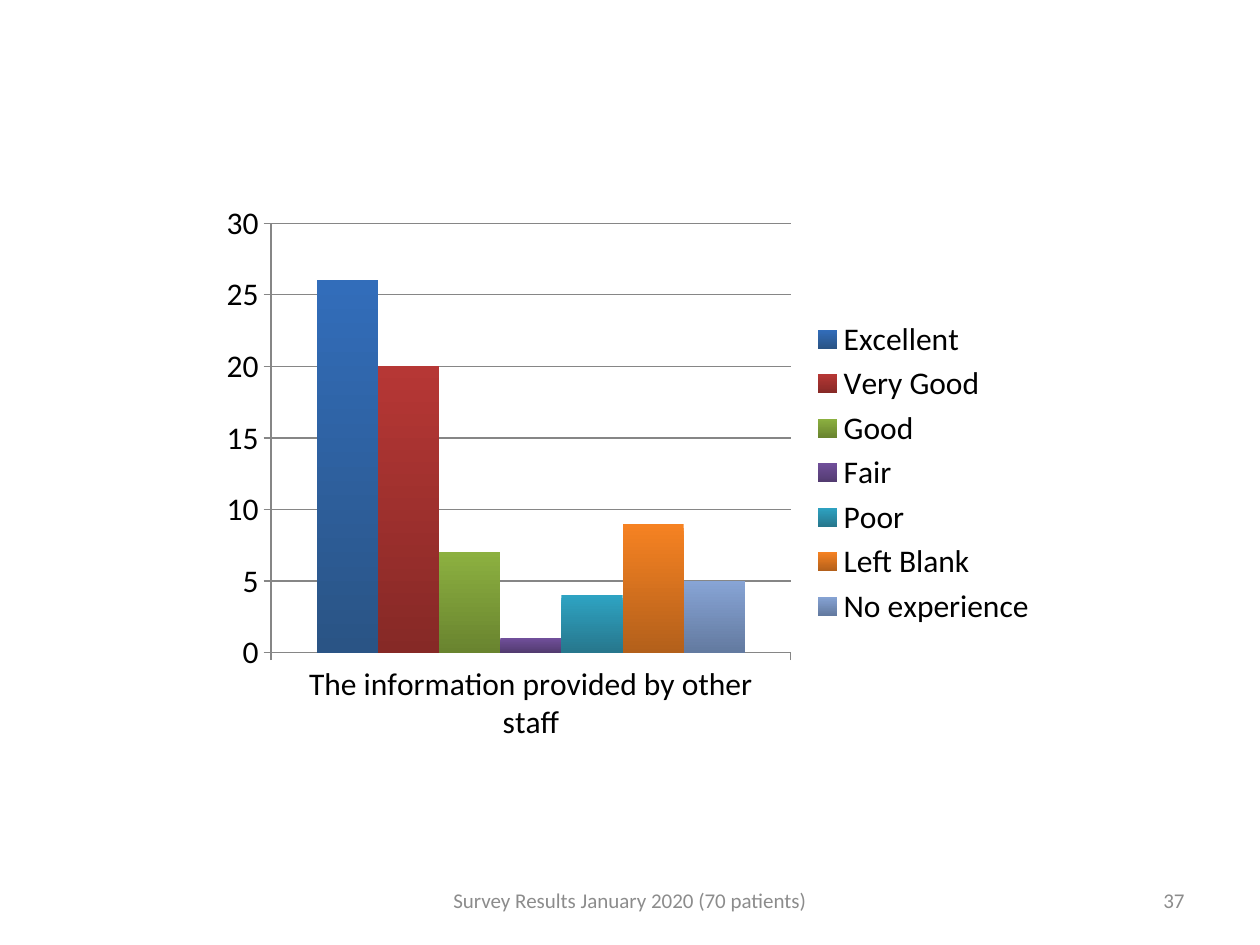
from pptx import Presentation
from pptx import util as u
from pptx.chart.data import CategoryChartData
from pptx.dml.color import RGBColor
from pptx.enum import chart as charts, text

COLORS = {"text": "000000", "footer": "8C8C8C", "axis": "868686"}

# Rating: (patients, gradient top, gradient bottom)
RATINGS = {
    "Excellent": (26, "326DBA", "2A5485"),
    "Very Good": (20, "B63735", "862926"),
    "Good": (7, "8CB040", "69842F"),
    "Fair": (1, "704F9A", "523B70"),
    "Poor": (4, "2EA3C2", "27778D"),
    "Left Blank": (9, "F68222", "B3601B"),
    "No experience": (5, "87A4D5", "637AA0"),
}


class SlideBuilder:
    font_name = "Calibri"

    def __init__(self, slide):
        self.slide = slide

    def style_font(self, font, size, color):
        font.name = self.font_name
        font.size = u.Pt(size)
        font.color.rgb = RGBColor.from_string(COLORS[color])

    def add_footer(self, words, left, width, alignment):
        box = self.slide.shapes.add_textbox(
            u.Cm(left), u.Cm(17.65), u.Cm(width), u.Cm(1.01))
        frame = box.text_frame
        frame.word_wrap = True
        frame.vertical_anchor = text.MSO_ANCHOR.MIDDLE
        frame.text = words
        paragraph = frame.paragraphs[0]
        paragraph.alignment = alignment
        self.style_font(paragraph.runs[0].font, 12, "footer")

    def style_line(self, line):
        line.color.rgb = RGBColor.from_string(COLORS["axis"])
        line.width = u.Pt(0.75)

    def style_axis(self, axis):
        axis.major_tick_mark = charts.XL_TICK_MARK.OUTSIDE
        axis.minor_tick_mark = charts.XL_TICK_MARK.NONE
        self.style_line(axis.format.line)

    def add_column_chart(self, category, ratings, left, top, width, height):
        data = CategoryChartData()
        data.categories = [category]
        for name, (count, _, _) in ratings.items():
            data.add_series(name, [count])
        chart = self.slide.shapes.add_chart(
            charts.XL_CHART_TYPE.COLUMN_CLUSTERED,
            u.Cm(left), u.Cm(top), u.Cm(width), u.Cm(height), data).chart
        self.style_font(chart.font, 18, "text")
        chart.has_title = False
        chart.has_legend = True
        chart.legend.position = charts.XL_LEGEND_POSITION.RIGHT
        chart.legend.include_in_layout = False

        self.style_axis(chart.category_axis)
        value_axis = chart.value_axis
        self.style_axis(value_axis)
        value_axis.minimum_scale = 0
        value_axis.maximum_scale = 30
        value_axis.major_unit = 5
        value_axis.has_major_gridlines = True
        self.style_line(value_axis.major_gridlines.format.line)

        plot = chart.plots[0]
        plot.gap_width = 150
        plot.overlap = 0
        plot.vary_by_categories = False
        for series, (_, *shades) in zip(plot.series, ratings.values()):
            fill = series.format.fill
            fill.gradient()
            fill.gradient_angle = 270
            for stop, shade in zip(fill.gradient_stops, shades):
                stop.color.rgb = RGBColor.from_string(shade)


def main():
    presentation = Presentation()
    presentation.slide_width = u.Cm(25.4)
    presentation.slide_height = u.Cm(19.05)
    blank_layout = presentation.slide_layouts[6]
    builder = SlideBuilder(presentation.slides.add_slide(blank_layout))

    builder.add_column_chart("The information provided by other staff", RATINGS,
                             left=4.23, top=3.89, width=16.93, height=11.28)
    builder.add_footer("37", 18.2, 5.93, text.PP_ALIGN.RIGHT)
    builder.add_footer("Survey Results January 2020 (70 patients)",
                       8.68, 8.04, text.PP_ALIGN.CENTER)
    presentation.save("out.pptx")


if __name__ == "__main__":
    main()
